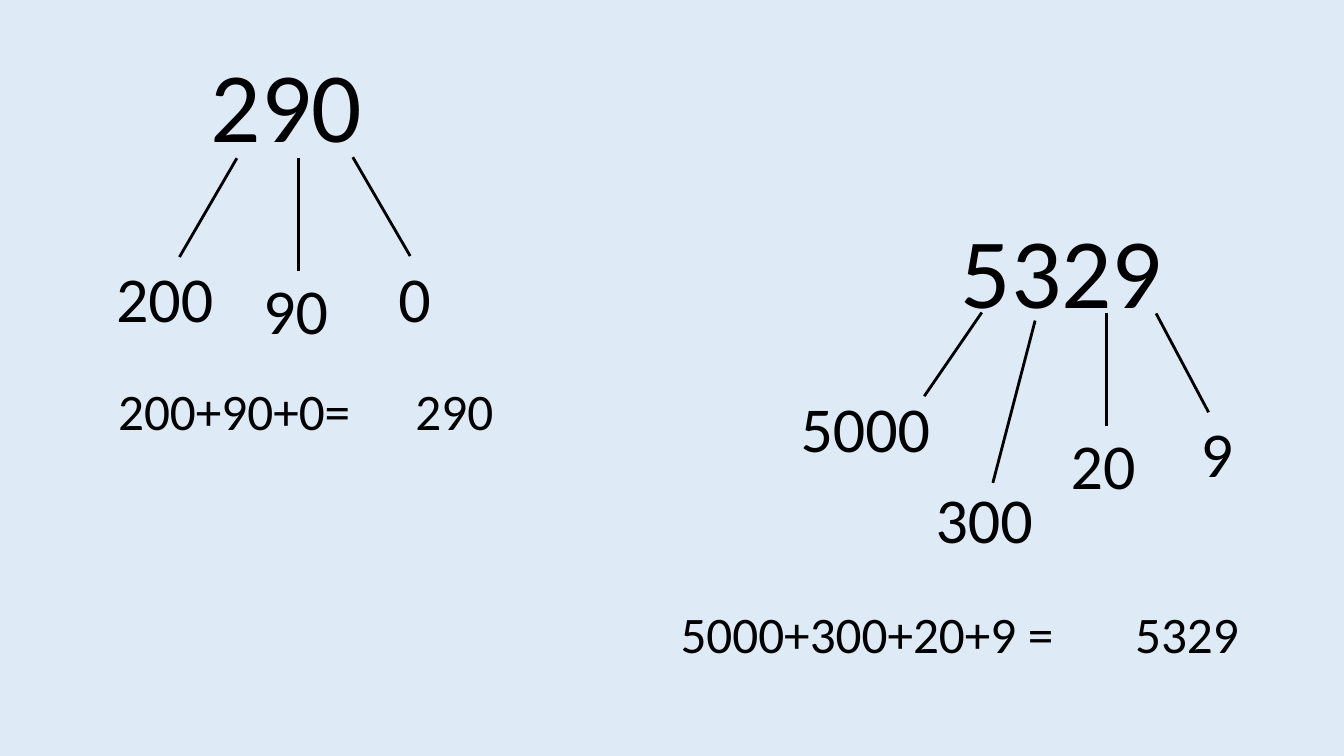
from lxml.etree import SubElement
from pptx import Presentation
from pptx.dml.color import RGBColor
from pptx.enum.shapes import MSO_CONNECTOR
from pptx.enum.text import MSO_ANCHOR, MSO_AUTO_SIZE, PP_ALIGN
from pptx.oxml.ns import qn
from pptx.util import Pt


def color(value):
    return RGBColor.from_string(value)


class NumberSlide:
    font_name = "Calibri"
    ink = "000000"
    background = "DEEBF7"
    inset = 3
    line_width = 2
    number_style = (71, 91.4)
    part_style = (45.7, 61.2)
    sum_style = (36.6, 49.7)

    def __init__(self, presentation):
        self.slide = presentation.slides.add_slide(presentation.slide_layouts[6])
        fill = self.slide.background.fill
        fill.solid()
        fill.fore_color.rgb = color(self.background)

    def add_text(self, text, left, top, width, style):
        size, height = style
        box = self.slide.shapes.add_textbox(Pt(left), Pt(top), Pt(width), Pt(height))
        frame = box.text_frame
        frame.text = text
        frame.word_wrap = False
        frame.auto_size = MSO_AUTO_SIZE.SHAPE_TO_FIT_TEXT
        frame.vertical_anchor = MSO_ANCHOR.MIDDLE
        frame.margin_left = frame.margin_right = Pt(self.inset)
        frame.margin_top = frame.margin_bottom = Pt(self.inset)
        paragraph = frame.paragraphs[0]
        paragraph.alignment = PP_ALIGN.LEFT
        font = paragraph.runs[0].font
        font.name = self.font_name
        font.size = Pt(size)
        font.color.rgb = color(self.ink)

    def add_line(self, start_x, start_y, end_x, end_y):
        connector = self.slide.shapes.add_connector(
            MSO_CONNECTOR.STRAIGHT, Pt(start_x), Pt(start_y), Pt(end_x), Pt(end_y)
        )
        connector.line.color.rgb = color(self.ink)
        connector.line.width = Pt(self.line_width)
        SubElement(connector._element.spPr, qn("a:effectLst"))

    def add_decomposition(self, number, parts, branches, sums):
        self.add_text(*number, self.number_style)
        for part in parts:
            self.add_text(*part, self.part_style)
        for branch in branches:
            self.add_line(*branch)
        for sum_text in sums:
            self.add_text(*sum_text, self.sum_style)


def main():
    presentation = Presentation()
    presentation.slide_width = Pt(960)
    presentation.slide_height = Pt(540)
    number_slide = NumberSlide(presentation)
    number_slide.add_decomposition(
        number=("290", 147.6, 27.4, 114.5),
        parts=[
            ("200", 79.9, 181.4, 75.6),
            ("90", 185, 190.1, 52.6),
            ("0", 281.5, 181.4, 28.8),
        ],
        branches=[
            (128.2, 183.6, 169.2, 113),
            (213.1, 193.7, 213.1, 113),
            (293, 182.9, 252, 112.3),
        ],
        sums=[("200+90+0=", 81.4, 267.8, 172.8), ("290", 293.8, 267.8, 61.9)],
    )
    number_slide.add_decomposition(
        number=("5329", 683.3, 146.2, 151.2),
        parts=[
            ("5000", 568.8, 274.3, 99.4),
            ("300", 665.3, 339.1, 75.6),
            ("20", 761.8, 301, 52.6),
            ("9", 854.6, 292.3, 28.8),
        ],
        branches=[
            (660.2, 283, 701.3, 223.2),
            (709.2, 344.9, 739.4, 229),
            (790.6, 304.6, 790.6, 223.9),
            (863.3, 294.5, 825.8, 223.9),
        ],
        sums=[("5000+300+20+9 =", 483.1, 427, 274.3), ("5329", 807.8, 427, 80.6)],
    )
    presentation.save("out.pptx")


if __name__ == "__main__":
    main()
